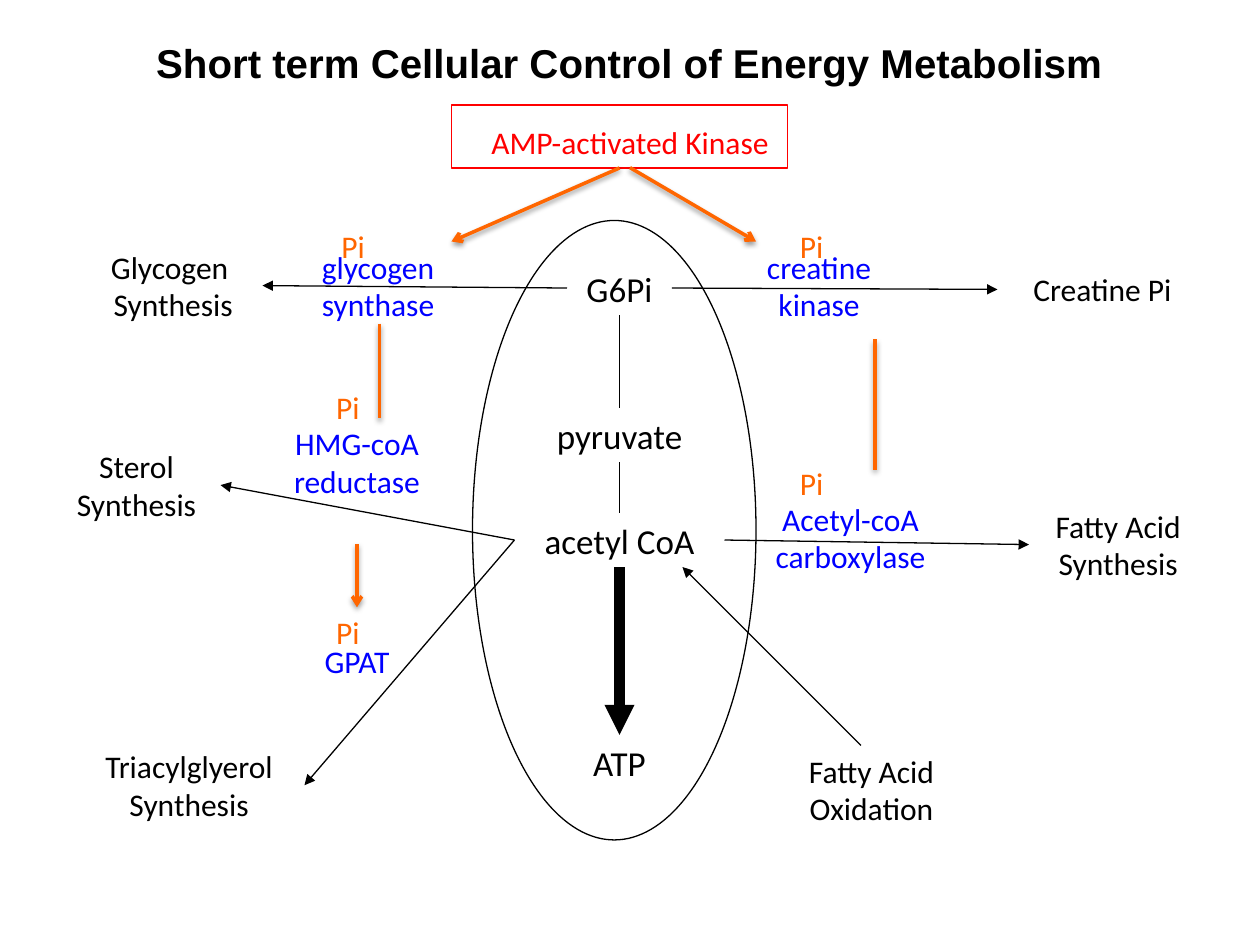
from lxml.etree import SubElement
from pptx import Presentation
from pptx.dml.color import RGBColor
from pptx.enum.shapes import MSO_CONNECTOR, MSO_SHAPE
from pptx.enum.text import MSO_ANCHOR, MSO_AUTO_SIZE, PP_ALIGN
from pptx.oxml.ns import qn
from pptx.util import Pt

BLACK = RGBColor(0x00, 0x00, 0x00)
RED = RGBColor(0xFF, 0x00, 0x00)
BLUE = RGBColor(0x00, 0x00, 0xFF)
ORANGE = RGBColor(0xFF, 0x66, 0x00)
TOP, LEFT, BOTTOM, RIGHT = range(4)
LINE_HEIGHT = 21.6


def format_text(text_frame, size, color, alignment, font="Calibri", bold=False):
    """Give every paragraph and run of a text frame the same look."""
    for paragraph in text_frame.paragraphs:
        paragraph.alignment = alignment
        for run in paragraph.runs:
            run.font.name = font
            run.font.size = Pt(size)
            run.font.bold = bold
            run.font.color.rgb = color


def add_label(slide, text, left, top, width, color=BLACK, size=18, lines=1,
              alignment=PP_ALIGN.CENTER, anchor=MSO_ANCHOR.TOP):
    """Add a wrapping text box tall enough for its lines."""
    height = 7.2 + lines * LINE_HEIGHT * size / 18
    label = slide.shapes.add_textbox(Pt(left), Pt(top), Pt(width), Pt(height))
    text_frame = label.text_frame
    text_frame.word_wrap = True
    text_frame.auto_size = MSO_AUTO_SIZE.SHAPE_TO_FIT_TEXT
    text_frame.vertical_anchor = anchor
    text_frame.text = text
    format_text(text_frame, size, color, alignment)
    return label


def add_outline(slide, preset, left, top, width, height, color):
    """Add an unfilled shape with a thin outline."""
    shape = slide.shapes.add_shape(preset, Pt(left), Pt(top), Pt(width), Pt(height))
    shape.shadow.inherit = False
    shape.fill.background()
    shape.line.color.rgb = color
    shape.line.width = Pt(0.75)
    return shape


def add_line(slide, start=(0, 0), end=(0, 0), color=BLACK, width=0.75, head=None):
    """Add a straight line with an optional arrowhead at its end."""
    points = [Pt(value) for value in (*start, *end)]
    line = slide.shapes.add_connector(MSO_CONNECTOR.STRAIGHT, *points)
    line.line.color.rgb = color
    line.line.width = Pt(width)
    if head:
        SubElement(line.line._get_or_add_ln(), qn("a:tailEnd"), type=head)
    SubElement(line._element.spPr, qn("a:effectLst"))
    return line


def join(slide, source, source_side, target, target_side, width=0.75, head="triangle"):
    """Connect the side of one box to the side of another."""
    line = add_line(slide, width=width, head=head)
    line.begin_connect(source, source_side)
    line.end_connect(target, target_side)


def add_regulation(slide, start, end, head=None):
    """Add an orange regulation line with a soft shadow below it."""
    line = add_line(slide, start, end, ORANGE, 2, head)
    effects = line._element.spPr.find(qn("a:effectLst"))
    shadow = SubElement(effects, qn("a:outerShdw"), blurRad=str(Pt(3.1)),
                        dist=str(Pt(1.6)), dir="5400000", rotWithShape="0")
    color = SubElement(shadow, qn("a:srgbClr"), val="000000")
    SubElement(color, qn("a:alpha"), val="38000")
    return line


def add_title(slide, text, left, top, width, height):
    """Place and format the title placeholder."""
    title = slide.shapes.title
    title.left, title.top, title.width, title.height = map(Pt, (left, top, width, height))
    title.text_frame.text = text
    title.text_frame.vertical_anchor = MSO_ANCHOR.TOP
    title.text_frame.auto_size = MSO_AUTO_SIZE.SHAPE_TO_FIT_TEXT
    format_text(title.text_frame, 23, BLACK, PP_ALIGN.CENTER, "Arial", True)


def add_energy_column(slide, left, top, width, height):
    """Draw the cell ellipse with its chain of metabolites; return them by name."""
    add_outline(slide, MSO_SHAPE.OVAL, left, top, width, height, BLACK)
    center = left + width / 2 + 3
    metabolites = {
        name: add_label(slide, name, center - label_width / 2, top + offset,
                        label_width, size=20, anchor=MSO_ANCHOR.MIDDLE)
        for name, offset, label_width in (("G6Pi", 23, 60), ("pyruvate", 107, 96),
                                          ("acetyl CoA", 167, 120), ("ATP", 294, 60))
    }
    g6pi, pyruvate, acetyl, atp = metabolites.values()
    join(slide, g6pi, BOTTOM, pyruvate, TOP, head=None)
    join(slide, pyruvate, BOTTOM, acetyl, TOP, head=None)
    join(slide, acetyl, BOTTOM, atp, TOP, width=5.75)
    return metabolites


def add_pathways(slide, left, top, pathways, source_side, target_side):
    """Place pathway labels beside the cell and join each to its metabolite."""
    for text, x, y, width, lines, metabolite in pathways:
        label = add_label(slide, text, left + x, top + y, width, lines=lines)
        join(slide, metabolite, source_side, label, target_side)


def add_oxidation(slide, left, top, width):
    """Place the oxidation label and its arrow back to acetyl CoA."""
    add_label(slide, "Fatty Acid\nOxidation", left, top, width, lines=2)
    add_line(slide, (left + 42, top), (left - 60, top - 102), head="triangle")


def add_enzymes(slide, left, top, enzymes):
    """Place each enzyme with the phosphate mark above it."""
    for text, x, y, width, lines, phosphate_x, phosphate_y in enzymes:
        add_label(slide, text, left + x, top + y, width, BLUE, lines=lines)
        add_label(slide, "Pi", left + phosphate_x, top + phosphate_y, 31, ORANGE,
                  alignment=PP_ALIGN.LEFT)


def add_kinase(slide, left, top, width, height):
    """Draw the kinase box and its two arrows to the enzymes."""
    label = add_label(slide, "AMP-activated Kinase", left, top + 7, width + 12, RED)
    box = add_outline(slide, MSO_SHAPE.RECTANGLE, left, top, width, height, RED)
    for source, end_x in ((label, left + 174), (box, left)):
        arrow = add_regulation(slide, (0, 0), (end_x, top + 78), "arrow")
        arrow.begin_connect(source, BOTTOM)


def main():
    """Build the slide and save it."""
    presentation = Presentation()
    presentation.slide_width, presentation.slide_height = Pt(720), Pt(540)
    slide = presentation.slides.add_slide(presentation.slide_layouts[5])
    add_title(slide, "Short term Cellular Control of Energy Metabolism", 0, 18, 720, 35)

    metabolites = add_energy_column(slide, 270, 126, 162, 354)
    g6pi, acetyl = metabolites["G6Pi"], metabolites["acetyl CoA"]
    add_pathways(slide, 570, 151, (
        ("Creatine Pi", 0, 0, 120, 1, g6pi),
        ("Fatty Acid\nSynthesis", 18, 135, 102, 2, acetyl),
    ), RIGHT, LEFT)
    add_pathways(slide, 30, 138, (
        ("Glycogen \nSynthesis", 18, 0, 102, 2, g6pi),
        ("Sterol Synthesis", 0, 114, 96, 2, acetyl),
        ("Triacylglyerol Synthesis", 12, 285.5, 132, 2, acetyl),
    ), LEFT, RIGHT)
    add_oxidation(slide, 450, 426, 96)

    add_kinase(slide, 258, 60, 192, 36)
    add_enzymes(slide, 420, 126, (
        ("creatine\nkinase", 0, 12, 96, 2, 30, 0),
        ("Acetyl-coA\ncarboxylase", 0, 156, 132, 2, 30, 135.5),
    ))
    add_enzymes(slide, 156, 126, (
        ("glycogen\nsynthase", 12, 12, 96, 2, 32, 0),
        ("HMG-coA\nreductase", 0, 113, 96, 2, 29, 92),
        ("GPAT", 6, 237.5, 84, 1, 29, 221),
    ))
    add_regulation(slide, (500, 194), (500, 268.5))
    add_regulation(slide, (217, 185), (217, 239))
    add_regulation(slide, (204, 311), (204, 347), "arrow")
    presentation.save("out.pptx")


if __name__ == "__main__":
    main()
